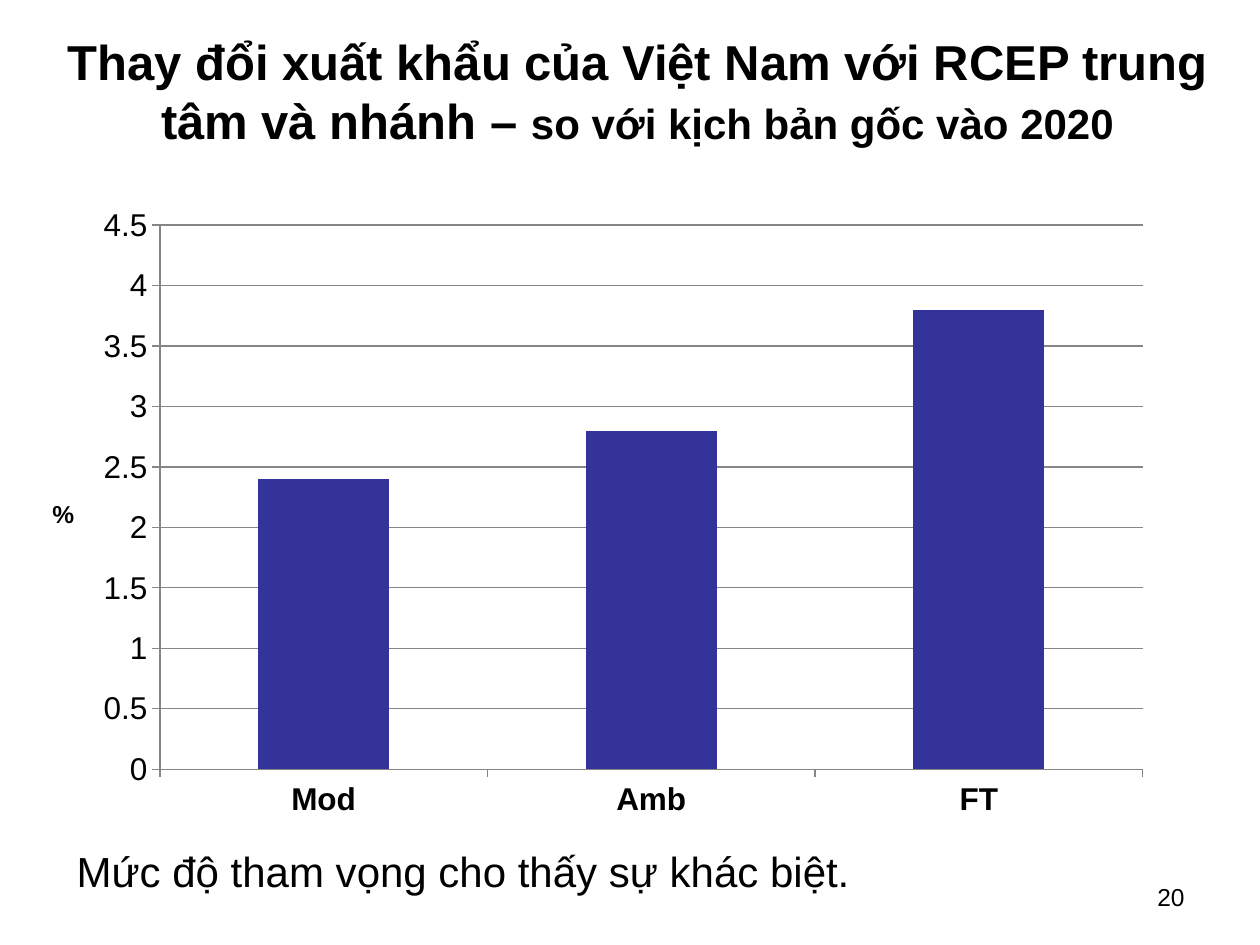
import pptx
import pptx.chart.data
import pptx.dml.color
import pptx.enum.chart
import pptx.enum.text
import pptx.oxml
import pptx.oxml.ns
import pptx.util
from pptx.util import Inches

FONT = "Arial"
COLORS = {"text": "000000", "bar": "333399", "grid": "868686"}
ALIGN = pptx.enum.text.PP_ALIGN
ANCHOR = pptx.enum.text.MSO_ANCHOR


def color(name):
    return pptx.dml.color.RGBColor.from_string(COLORS[name])


def style(font, size, bold=False):
    font.name = FONT
    font.size = pptx.util.Pt(size)
    font.bold = bold
    font.color.rgb = color("text")


def add_text(slide, box, runs, align=ALIGN.LEFT, anchor=ANCHOR.TOP, bold=False):
    """Place one paragraph made of (text, size) runs."""
    frame = slide.shapes.add_textbox(*map(Inches, box)).text_frame
    frame.word_wrap = True
    frame.vertical_anchor = anchor
    line = frame.paragraphs[0]
    line.alignment = align
    style(line.font, runs[0][1], bold)
    for text, size in runs:
        run = line.add_run()
        run.text = text
        style(run.font, size, bold)


def set_layout(parent, tag, **parts):
    """Give a chart part a manual layout in fractions of the chart."""
    old = parent.find(pptx.oxml.ns.qn("c:layout"))
    if old is not None:
        parent.remove(old)
    inner = '<c:layoutTarget val="inner"/>' if "w" in parts else ""
    modes = "".join(f'<c:{k}Mode val="edge"/>' for k in "xy")
    sizes = "".join(f'<c:{k} val="{v}"/>' for k, v in parts.items())
    layout = pptx.oxml.parse_xml(
        f'<c:layout {pptx.oxml.ns.nsdecls("c")}><c:manualLayout>'
        f"{inner}{modes}{sizes}</c:manualLayout></c:layout>")
    if tag:
        parent.find(pptx.oxml.ns.qn(tag)).addnext(layout)
    else:
        parent.insert(0, layout)


def add_bars(slide, box):
    data = pptx.chart.data.CategoryChartData()
    data.categories = ["Mod", "Amb", "FT"]
    data.add_series("Series 1", [2.4, 2.8, 3.8])
    kind = pptx.enum.chart.XL_CHART_TYPE.COLUMN_CLUSTERED
    chart = slide.shapes.add_chart(kind, *map(Inches, box), data).chart
    chart.has_legend = False
    chart.has_title = False
    style(chart.font, 18)

    # Bars
    plot = chart.plots[0]
    plot.gap_width = 150
    plot.vary_by_categories = False
    fill = plot.series[0].format.fill
    fill.solid()
    fill.fore_color.rgb = color("bar")

    # Axes
    cats, vals = chart.category_axis, chart.value_axis
    vals.minimum_scale, vals.maximum_scale, vals.major_unit = 0, 4.5, 0.5
    vals.has_major_gridlines = True
    for part in (cats, vals, vals.major_gridlines):
        part.format.line.color.rgb = color("grid")
        part.format.line.width = pptx.util.Pt(0.75)
    for axis in (cats, vals):
        axis.major_tick_mark = pptx.enum.chart.XL_TICK_MARK.OUTSIDE
        style(axis.tick_labels.font, 18, axis is cats)

    # Upright axis title
    frame = vals.axis_title.text_frame
    frame.text = "%"
    style(frame.paragraphs[0].runs[0].font, 14, True)
    body = frame._txBody.bodyPr
    body.set("rot", "0")
    body.set("vert", "horz")
    set_layout(vals.axis_title._element, "c:tx", x=0.02, y=0.47)
    area = chart._chartSpace.chart.plotArea
    set_layout(area, None, x=0.118, y=0.047, w=0.861, h=0.857)


def main():
    deck = pptx.Presentation()
    deck.slide_width, deck.slide_height = Inches(10), Inches(7.5)
    slide = deck.slides.add_slide(deck.slide_layouts[6])

    # Title
    add_text(slide, (0.12, 0.21, 9.88, 1.02),
             [("Thay đổi xuất khẩu của Việt Nam với RCEP trung tâm và nhánh – ", 28),
              ("so với kịch bản gốc vào 2020", 24)],
             ALIGN.CENTER, ANCHOR.MIDDLE, True)
    # Chart
    add_bars(slide, (0.2, 1.55, 9.06, 5.04))
    # Remark and page number
    add_text(slide, (0.51, 6.66, 7.8, 0.63),
             [("Mức độ tham vọng cho thấy sự khác biệt.", 24)])
    add_text(slide, (8.67, 6.95, 0.83, 0.4), [("20", 14)], ALIGN.RIGHT)
    deck.save("out.pptx")


if __name__ == "__main__":
    main()
